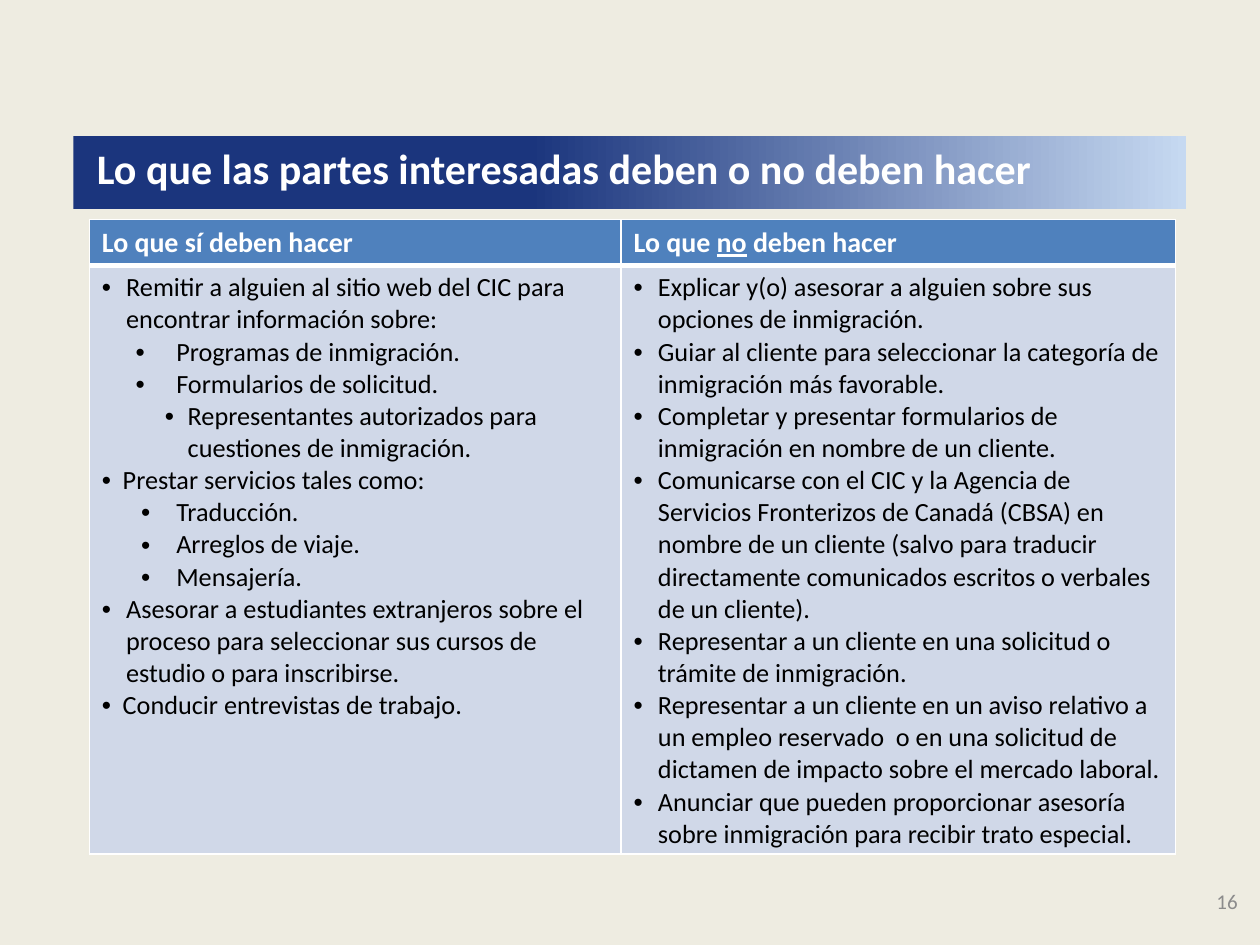
from lxml import etree
from pptx import Presentation
from pptx.dml.color import RGBColor
from pptx.enum.shapes import MSO_SHAPE
from pptx.enum.text import MSO_ANCHOR, PP_ALIGN
from pptx.oxml.ns import qn
from pptx.util import Cm, Pt

RECTANGLE = MSO_SHAPE.RECTANGLE
MIDDLE = MSO_ANCHOR.MIDDLE
LEFT, RIGHT = PP_ALIGN.LEFT, PP_ALIGN.RIGHT

CREAM = RGBColor(0xEE, 0xEC, 0xE1)
NAVY = RGBColor(0x1B, 0x35, 0x7D)
SKY = RGBColor(0xC6, 0xD9, 0xF1)
HEADER_BLUE = RGBColor(0x4F, 0x81, 0xBD)
BODY_BLUE = RGBColor(0xD0, 0xD8, 0xE8)
WHITE = RGBColor(0xFF, 0xFF, 0xFF)
BLACK = RGBColor(0, 0, 0)
GREY = RGBColor(0x8C, 0x8C, 0x8C)
FONT = "Calibri"

# Left margin and hanging indent of each list level, in centimetres
MAIN = (0.49, 0.49)
SHORT = (0.42, 0.42)
TOPIC = (1.5, 0.82)
DETAIL = (1.73, 0.46)
SERVICE = (1.5, 0.71)

HEADINGS = [
    [("Lo que sí deben hacer", False)],
    [("Lo que ", False), ("no", True), (" deben hacer", False)],
]
ALLOWED = [
    (MAIN, "Remitir a alguien al sitio web del CIC para encontrar información sobre:"),
    (TOPIC, "Programas de inmigración."),
    (TOPIC, "Formularios de solicitud."),
    (DETAIL, "Representantes autorizados para cuestiones de inmigración."),
    (SHORT, "Prestar servicios tales como:"),
    (SERVICE, "Traducción."),
    (SERVICE, "Arreglos de viaje."),
    (SERVICE, "Mensajería."),
    (MAIN, "Asesorar a estudiantes extranjeros sobre el proceso para seleccionar "
           "sus cursos de estudio o para inscribirse."),
    (SHORT, "Conducir entrevistas de trabajo."),
]
FORBIDDEN = [(MAIN, duty) for duty in (
    "Explicar y(o) asesorar a alguien sobre sus opciones de inmigración.",
    "Guiar al cliente para seleccionar la categoría de inmigración más favorable.",
    "Completar y presentar formularios de inmigración en nombre de un cliente.",
    "Comunicarse con el CIC y la Agencia de Servicios Fronterizos de Canadá (CBSA) "
    "en nombre de un cliente (salvo para traducir directamente comunicados escritos "
    "o verbales de un cliente).",
    "Representar a un cliente en una solicitud o trámite de inmigración.",
    "Representar a un cliente en un aviso relativo a un empleo reservado  o en una "
    "solicitud de dictamen de impacto sobre el mercado laboral.",
    "Anunciar que pueden proporcionar asesoría sobre inmigración para recibir trato "
    "especial.",
)]


def add_run(paragraph, text, size, color, bold=False, underline=False):
    """Append one formatted run to a paragraph."""
    run = paragraph.add_run()
    run.text = text
    font = run.font
    font.name, font.size, font.bold = FONT, Pt(size), bold
    font.color.rgb = color
    if underline:
        font.underline = True


def add_band(slide):
    """Add the gradient band behind the title."""
    band = slide.shapes.add_shape(RECTANGLE, Cm(1.48), Cm(2.74), Cm(22.43), Cm(1.48))
    band.shadow.inherit = False
    band.line.fill.background()
    band.fill.gradient()
    band.fill.gradient_angle = 0
    for stop, position, color in zip(band.fill.gradient_stops, (0.41, 1), (NAVY, SKY)):
        stop.position = position
        stop.color.rgb = color
    slide.shapes._spTree.insert(2, band._element)


def fill_title(slide, text):
    """Place and write the title placeholder."""
    title = slide.shapes.title
    title.left, title.top, title.width, title.height = Cm(1.7), Cm(2.54), Cm(22.43), Cm(1.7)
    title.text_frame.vertical_anchor = MIDDLE
    paragraph = title.text_frame.paragraphs[0]
    paragraph.alignment = LEFT
    add_run(paragraph, text, 24, WHITE, bold=True)


def add_page_number(slide, number):
    """Add the page number at the lower right."""
    frame = slide.shapes.add_textbox(Cm(22.86), Cm(17.65), Cm(2.34), Cm(1.02)).text_frame
    frame.word_wrap = True
    frame.vertical_anchor = MIDDLE
    paragraph = frame.paragraphs[0]
    paragraph.alignment = RIGHT
    add_run(paragraph, number, 12, GREY)


def style_cell(cell, color, top, bottom):
    """Give a cell its fill and white borders, widths in points."""
    properties = cell._tc.get_or_add_tcPr()
    for side, width in (("lnL", 1), ("lnR", 1), ("lnT", top), ("lnB", bottom)):
        border = etree.SubElement(properties, qn(f"a:{side}"), w=str(Pt(width)))
        solid = etree.SubElement(border, qn("a:solidFill"))
        etree.SubElement(solid, qn("a:srgbClr"), val=str(WHITE))
    cell.fill.solid()
    cell.fill.fore_color.rgb = color


def add_bullet(paragraph, margin, hanging):
    """Give a paragraph a bullet and a hanging indent."""
    properties = paragraph._p.get_or_add_pPr()
    properties.set("marL", str(Cm(margin)))
    properties.set("indent", str(-Cm(hanging)))
    etree.SubElement(properties, qn("a:buFont"), typeface="Arial")
    etree.SubElement(properties, qn("a:buChar"), char="•")


def write_list(cell, duties):
    """Write bulleted duties into a cell."""
    frame = cell.text_frame
    for index, (indents, text) in enumerate(duties):
        paragraph = frame.add_paragraph() if index else frame.paragraphs[0]
        add_bullet(paragraph, *indents)
        add_run(paragraph, text, 15, BLACK)


def add_duties_table(slide):
    """Add the table of allowed and forbidden duties."""
    table = slide.shapes.add_table(2, 2, Cm(1.8), Cm(4.42), Cm(21.9), Cm(12.78)).table
    table.columns[0].width, table.columns[1].width = Cm(10.72), Cm(11.18)
    table.rows[0].height, table.rows[1].height = Cm(0.92), Cm(11.86)
    for column, (heading, duties) in enumerate(zip(HEADINGS, (ALLOWED, FORBIDDEN))):
        header, body = table.cell(0, column), table.cell(1, column)
        style_cell(header, HEADER_BLUE, 1, 3)
        style_cell(body, BODY_BLUE, 3, 1)
        for text, underline in heading:
            add_run(header.text_frame.paragraphs[0], text, 16, WHITE, True, underline)
        write_list(body, duties)


def main():
    """Build and save the slide."""
    deck = Presentation()
    deck.slide_width, deck.slide_height = Cm(25.4), Cm(19.05)
    slide = deck.slides.add_slide(deck.slide_layouts[5])
    slide.background.fill.solid()
    slide.background.fill.fore_color.rgb = CREAM
    add_band(slide)
    fill_title(slide, "Lo que las partes interesadas deben o no deben hacer")
    add_page_number(slide, "16")
    add_duties_table(slide)
    deck.save("out.pptx")


if __name__ == "__main__":
    main()
